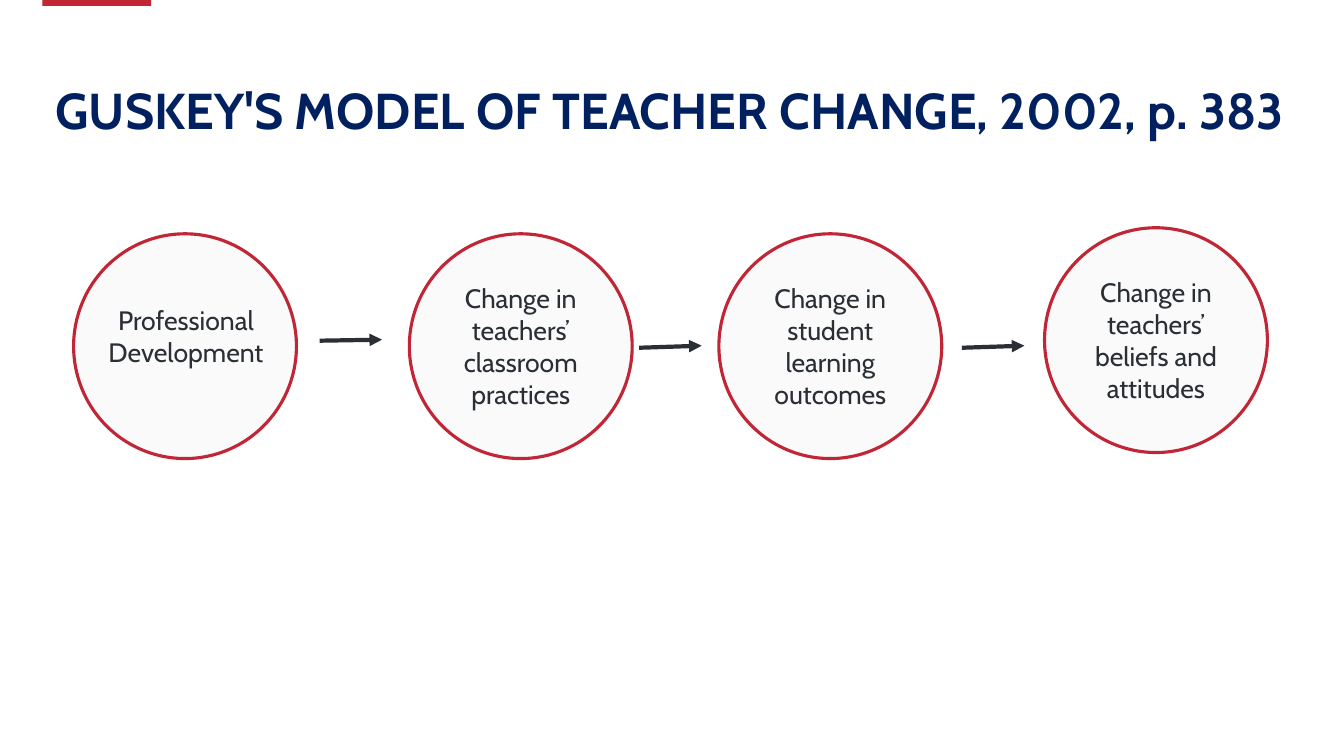
import pptx
import pptx.util
import pptx.dml.color
import pptx.enum.shapes
import pptx.enum.text
import pptx.oxml
import pptx.oxml.ns

RED, NAVY, INK, PALE = "C12637", "002060", "2A2F36", "FAFAFA"


def rgb(code):
    return pptx.dml.color.RGBColor.from_string(code)


def write(sp, text, size=19, color=INK, font="Cabin", bold=False, align="CENTER",
          anchor="MIDDLE", inset=0.1, spacing=None):
    tf = sp.text_frame
    tf.word_wrap = True
    tf.vertical_anchor = getattr(pptx.enum.text.MSO_ANCHOR, anchor)
    tf.margin_left = tf.margin_right = pptx.util.Inches(inset)
    tf.margin_top = tf.margin_bottom = pptx.util.Inches(inset)
    for i, line in enumerate(text.split("\n")):
        p = tf.add_paragraph() if i else tf.paragraphs[0]
        p.alignment = getattr(pptx.enum.text.PP_ALIGN, align)
        p.line_spacing = spacing
        r = p.add_run()
        r.text = line
        r.font.name = font
        r.font.size = pptx.util.Pt(size)
        r.font.bold = bold
        r.font.color.rgb = rgb(color)


class Deck:
    def __init__(self):
        self.prs = pptx.Presentation()
        self.prs.slide_width = pptx.util.Inches(13.33)
        self.prs.slide_height = pptx.util.Inches(7.5)
        self.column = self.prs.slide_width / 100
        self.row = self.prs.slide_height / 100
        self.s = self.prs.slides.add_slide(self.prs.slide_layouts[6])

    def grid(self, *cells):
        return [round(v * (self.row if i % 2 else self.column))
                for i, v in enumerate(cells)]

    def shape(self, kind, box, fill, line=None, width=2.25):
        preset = getattr(pptx.enum.shapes.MSO_SHAPE, kind)
        sp = self.s.shapes.add_shape(preset, *self.grid(*box))
        sp.shadow.inherit = False
        sp.fill.solid()
        sp.fill.fore_color.rgb = rgb(fill)
        if line:
            sp.line.color.rgb = rgb(line)
            sp.line.width = pptx.util.Pt(width)
        else:
            sp.line.fill.background()
        return sp

    def text(self, box, text, **style):
        sp = self.s.shapes.add_textbox(*self.grid(*box))
        write(sp, text, **style)

    def arrow(self, *ends):
        sp = self.s.shapes.add_connector(
            pptx.enum.shapes.MSO_CONNECTOR.STRAIGHT, *self.grid(*ends))
        sp.line.color.rgb = rgb(INK)
        sp.line.width = pptx.util.Pt(3)
        tail = pptx.oxml.parse_xml(
            '<a:tailEnd %s type="triangle"/>' % pptx.oxml.ns.nsdecls("a"))
        sp.line._get_or_add_ln().append(tail)
        sp._element.spPr.append(pptx.oxml.parse_xml(
            "<a:effectLst %s/>" % pptx.oxml.ns.nsdecls("a")))


def main():
    deck = Deck()
    deck.shape("RECTANGLE", (3.15, 0, 8.1, 0.8), RED)
    deck.text((3.15, 5.33, 93.77, 19.33), "GUSKEY'S MODEL OF TEACHER CHANGE, 2002, p. 383",
              size=36, color=NAVY, bold=True, align="LEFT", inset=0.13, spacing=0.9)

    stages = [
        (5.48, 30.93, ""),
        (30.46, 30.93, "Change in\nteachers’ classroom\npractices"),
        (53.49, 30.93, "Change in\nstudent\nlearning outcomes"),
        (77.72, 30.13, "Change in\nteachers’ beliefs and attitudes"),
    ]
    for left, top, label in stages:
        circle = deck.shape("OVAL", (left, top, 16.58, 29.73), PALE, RED)
        if label:
            write(circle, label)

    for left, start, end in [(23.78, 45.07, 44.93), (47.56, 46, 45.73), (71.57, 46, 45.73)]:
        deck.arrow(left, start, left + 4.65, end)

    deck.text((6.75, 38.93, 14.18, 11.2), "Professional Development", anchor="TOP")
    deck.prs.save("out.pptx")


if __name__ == "__main__":
    main()
